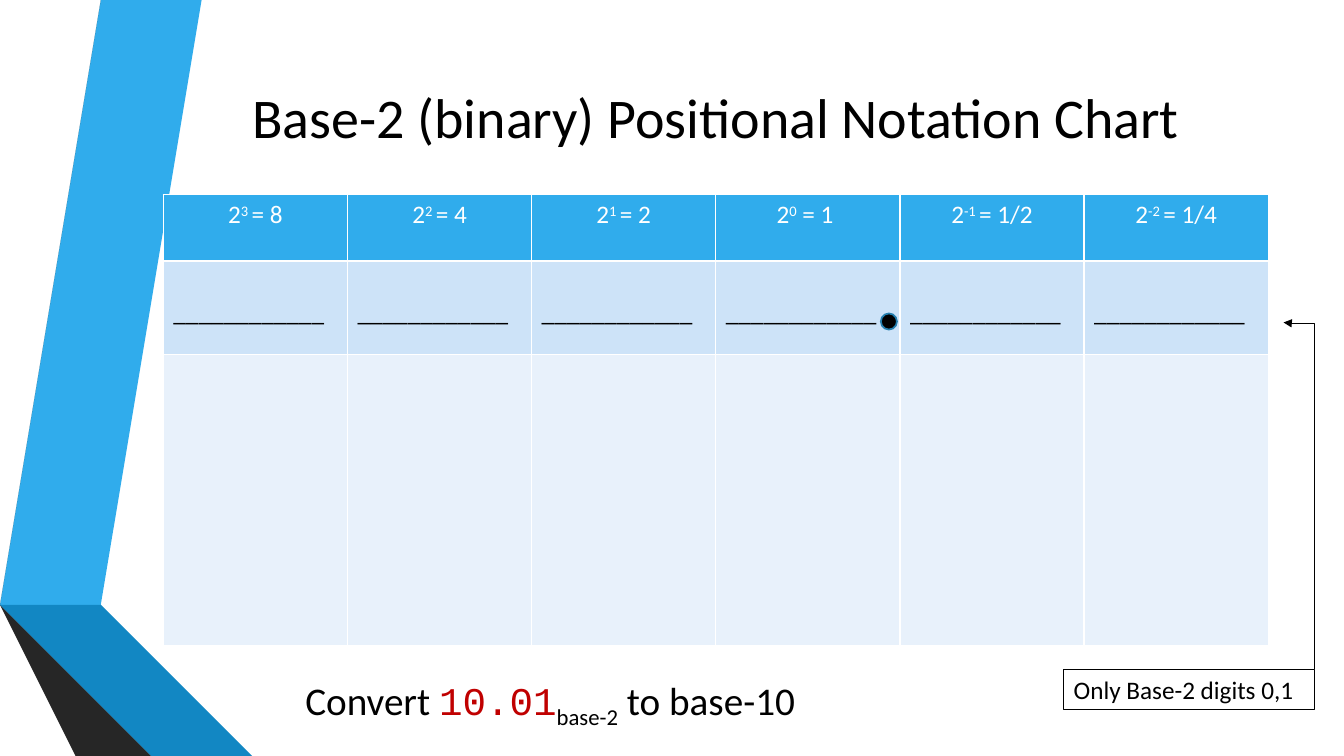
from lxml.etree import SubElement
from pptx import Presentation
from pptx.dml.color import RGBColor
from pptx.enum.shapes import MSO_CONNECTOR, MSO_SHAPE
from pptx.enum.text import MSO_ANCHOR, PP_ALIGN
from pptx.oxml.ns import qn
from pptx.util import Inches, Pt

BLACK, WHITE, RED = "000000", "FFFFFF", "C00000"
RIBBONS = [
    ("30ACEC", [(0.5, 5.78), (0.77, 5.83), (1.73, 0), (1.45, 0)]),
    ("595959", [(1.39, 0), (1.11, 0), (0.16, 5.73), (0.44, 5.77)]),
    ("262626", [(0.16, 5.73), (1.45, 7.5), (1.51, 7.5)]),
    ("0C5A82", [(0.5, 5.79), (2.08, 7.5), (2.14, 7.5)]),
    ("1287C3", [(0.5, 5.79), (2.14, 7.5), (2.83, 7.5), (0.77, 5.83), (0.5, 5.78)]),
    ("404040", [(2.02, 7.5), (0.48, 5.83), (0.43, 5.77), (0.16, 5.73), (1.51, 7.5)]),
]
PLACES = [("3 ", "= 8"), ("2 ", "= 4"), ("1 ", "= 2"),
          ("0", " = 1 "), ("-1 ", "= 1/2"), ("-2 ", "= 1/4")]
ROWS = [(0.66, "30ACEC"), (0.93, "CDE3F8"), (2.89, "E8F1FB")]


def rgb(value):
    return RGBColor.from_string(value)


def paint(shape, fill, line=None, width=0.75):
    shape.shadow.inherit = False
    shape.fill.solid()
    shape.fill.fore_color.rgb = rgb(fill)
    if line:
        shape.line.color.rgb = rgb(line)
        shape.line.width = Pt(width)
    else:
        shape.line.fill.background()


def write(tf, runs, size, align=PP_ALIGN.LEFT, color=BLACK):
    """Each run is its text and a dict of what differs from the defaults."""
    p = tf.paragraphs[0]
    p.alignment = align
    for text, changes in runs:
        r = p.add_run()
        r.text = text
        look = {"name": "Calibri", "size": Pt(size), "bold": False}
        look.update({k: v for k, v in changes.items() if k == "name"})
        for key, value in look.items():
            setattr(r.font, key, value)
        r.font.color.rgb = rgb(changes.get("color", color))
        if "base" in changes:
            r._r.get_or_add_rPr().set("baseline", str(changes["base"] * 1000))


def text_box(s, box, runs, size, align=PP_ALIGN.LEFT, anchor=MSO_ANCHOR.TOP):
    tf = s.shapes.add_textbox(*map(Inches, box)).text_frame
    tf.word_wrap = True
    tf.vertical_anchor = anchor
    write(tf, runs, size, align)


def ribbons(s):
    for color, points in RIBBONS:
        builder = s.shapes.build_freeform(*points[0], scale=Inches(1))
        builder.add_line_segments(points[1:], close=True)
        paint(builder.convert_to_shape(), color)


def cell_borders(cell):
    tcPr = cell._tc.get_or_add_tcPr()
    for i, side in enumerate(("a:lnL", "a:lnR", "a:lnT", "a:lnB")):
        ln = tcPr.makeelement(qn(side), {"w": str(Pt(1))})
        SubElement(SubElement(ln, qn("a:solidFill")), qn("a:srgbClr"), val=WHITE)
        tcPr.insert(i, ln)


def place_chart(s, box):
    left, top, width, height = box
    table = s.shapes.add_table(len(ROWS), len(PLACES), *map(Inches, box)).table
    for col in table.columns:
        col.width = Inches(width / len(PLACES))
    for i, (row_height, color) in enumerate(ROWS):
        table.rows[i].height = Inches(row_height)
        for j, (power, value) in enumerate(PLACES):
            cell = table.cell(i, j)
            cell.fill.solid()
            cell.fill.fore_color.rgb = rgb(color)
            cell_borders(cell)
            if i == 0:
                runs = [("2", {}), (power, {"base": 30}), (value, {})]
                write(cell.text_frame, runs, 18, PP_ALIGN.CENTER, WHITE)
            elif i == 1:
                cell.margin_top = Inches(0.36)
                write(cell.text_frame, [("_" * 12, {})], 18)
    # Binary point, just left of the fourth column's edge
    size = 0.16
    x = left + width * 4 / len(PLACES) - size - 0.03
    dot = s.shapes.add_shape(MSO_SHAPE.OVAL, *map(Inches, (x, top + 1.18, size, size)))
    paint(dot, BLACK, "247FAF", 1.25)


def digit_note(s, box, target):
    left, top, width, height = box
    note = s.shapes.add_shape(MSO_SHAPE.RECTANGLE, *map(Inches, box))
    paint(note, WHITE, BLACK)
    note.fill.background()
    note.text_frame.word_wrap = True
    note.text_frame.vertical_anchor = MSO_ANCHOR.TOP
    write(note.text_frame, [("Only Base-2 digits 0,1", {})], 18)

    # Elbow arrow from the top right corner, a quarter turn so it rises first
    x, y = target
    run, rise = left + width - x, top - y
    cx, cy = x + run / 2, y + rise / 2
    ends = cx - rise / 2, cy + run / 2, cx + rise / 2, cy - run / 2
    arrow = s.shapes.add_connector(MSO_CONNECTOR.ELBOW, *map(Inches, ends))
    arrow.line.color.rgb = rgb(BLACK)
    arrow.line.width = Pt(0.75)
    spPr = arrow._element.spPr
    spPr.find(qn("a:xfrm")).set("rot", str(270 * 60000))
    guides = spPr.find(qn("a:prstGeom")).find(qn("a:avLst"))
    SubElement(guides, qn("a:gd"), name="adj1", fmla="val 99800")
    SubElement(spPr.find(qn("a:ln")), qn("a:tailEnd"), type="triangle")
    SubElement(spPr, qn("a:effectLst"))


def main():
    prs = Presentation()
    prs.slide_width, prs.slide_height = Inches(13.33), Inches(7.5)
    s = prs.slides.add_slide(prs.slide_layouts[6])
    ribbons(s)
    text_box(s, (1.62, 0.75, 10.96, 0.8),
             [("Base-2 (binary) Positional Notation Chart", {})],
             40, PP_ALIGN.CENTER, MSO_ANCHOR.MIDDLE)
    place_chart(s, (1.62, 1.93, 10.96, 4.48))
    digit_note(s, (10.55, 6.64, 2.49, 0.4), (12.73, 3.2))
    text_box(s, (2.93, 6.66, 5.51, 0.57),
             [("Convert ", {}), ("10.01", {"name": "Courier New", "color": RED}),
              ("base-2", {"base": -25}), (" to base-10", {})], 28)
    prs.save("out.pptx")


if __name__ == "__main__":
    main()
